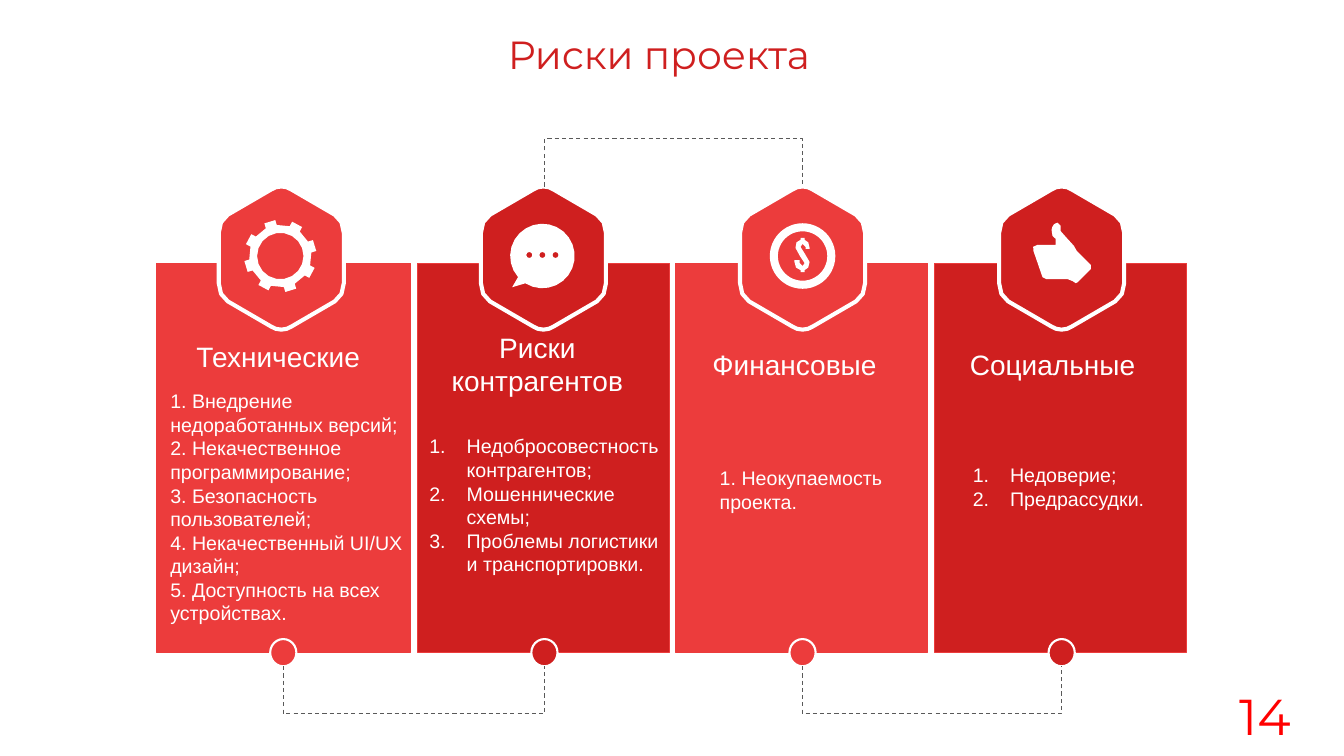
import math
from dataclasses import dataclass

import pptx
import pptx.dml.color
import pptx.enum.dml
import pptx.enum.shapes
import pptx.enum.text
import pptx.oxml
import pptx.oxml.ns
import pptx.util
from pptx.util import Inches

Point = tuple[float, float]
Contour = list[Point]

LIGHT, DARK, WHITE, GREY = "EC3C3C", "CF1F1F", "FFFFFF", "595959"
CARD_TOP, CARD_HEIGHT = 2.61, 3.86
HEX_MIDDLE = 2.56
DOT_WIDTH, DOT_HEIGHT = 0.26, 0.27
ICON_MIDDLE = 2.54
COIN_SIZE, COIN_RIM = 0.65, 0.08
LIST_INDENT = 0.37
SHAPES = pptx.enum.shapes.MSO_SHAPE
ALIGN = pptx.enum.text.PP_ALIGN


@dataclass(frozen=True)
class Card:
    left: float
    width: float
    color: str
    hex_center: float
    dot_left: float
    heading: str
    heading_left: float
    heading_top: float
    risks: list[str]
    risks_left: float
    risks_top: float
    numbered: bool


@dataclass(frozen=True)
class Bracket:
    start: float
    end: float
    y: float
    upward: bool


CARDS = [
    Card(1.55, 2.52, LIGHT, 2.79, 2.68, "Технические", 1.5, 3.16, [
        "1. Внедрение недоработанных версий;", "2. Некачественное программирование;",
        "3. Безопасность пользователей;", "4. Некачественный UI/UX дизайн;",
        "5. Доступность на всех устройствах."], 1.59, 4.56, False),
    Card(4.14, 2.5, DARK, 5.39, 5.27, "Риски контрагентов", 4.08, 3.23, [
        "Недобросовестность контрагентов;", "Мошеннические схемы;",
        "Проблемы логистики и транспортировки."], 4.16, 4.54, True),
    Card(6.7, 2.5, LIGHT, 7.96, 7.83, "Финансовые", 6.63, 3.23,
         ["1. Неокупаемость проекта."], 7.04, 4.39, False),
    Card(9.27, 2.5, DARK, 10.53, 10.4, "Социальные", 9.19, 3.23,
         ["Недоверие;", "Предрассудки."], 9.55, 4.36, True),
]
BRACKETS = [Bracket(2.81, 5.4, 6.61, False), Bracket(5.4, 7.96, 1.85, True),
            Bracket(7.96, 10.53, 6.61, False)]

# Two numbers are a straight step, six are a Bezier step.
HEX_QUARTER = [(0, -0.71), (-0.04, -0.71, -0.07, -0.7, -0.1, -0.68), (-0.53, -0.43),
               (-0.59, -0.39, -0.62, -0.33, -0.62, -0.25)]
THUMB = [(10.49, 2.21), (10.48, 2.21, 10.46, 2.22, 10.45, 2.23),
         (10.44, 2.24, 10.43, 2.27, 10.43, 2.28), (10.42, 2.33, 10.45, 2.36, 10.47, 2.37),
         (10.47, 2.43), (10.29, 2.43), (10.25, 2.43, 10.23, 2.46, 10.25, 2.49),
         (10.34, 2.75), (10.38, 2.77), (10.59, 2.77), (10.64, 2.79), (10.67, 2.81),
         (10.69, 2.8), (10.82, 2.67), (10.82, 2.63), (10.68, 2.49),
         (10.68, 2.49, 10.64, 2.4, 10.57, 2.35), (10.5, 2.31, 10.52, 2.27, 10.52, 2.24)]
DOLLAR = [(7.94, 2.36), (7.94, 2.38), (7.9, 2.39, 7.89, 2.41, 7.89, 2.46),
          (7.89, 2.54, 7.98, 2.55, 7.98, 2.61), (7.96, 2.64), (7.93, 2.61), (7.93, 2.58),
          (7.88, 2.58), (7.88, 2.6), (7.88, 2.65, 7.9, 2.67, 7.94, 2.68), (7.94, 2.7),
          (7.98, 2.7), (7.98, 2.68), (8.01, 2.67, 8.03, 2.65, 8.03, 2.6),
          (8.03, 2.52, 7.94, 2.52, 7.94, 2.45), (7.96, 2.42), (7.99, 2.45), (7.99, 2.47),
          (8.03, 2.47), (8.03, 2.46), (8.03, 2.41, 8.01, 2.39, 7.98, 2.38), (7.98, 2.36)]


def rgb(color: str) -> pptx.dml.color.RGBColor:
    return pptx.dml.color.RGBColor.from_string(color)


def trace(steps: list[tuple[float, ...]], samples: int = 2) -> Contour:
    """Turn straight and Bezier steps into points."""
    points = [steps[0]]
    for step in steps[1:]:
        if len(step) == 2:
            points.append(step)
            continue
        controls = [points[-1], step[:2], step[2:4], step[4:]]
        for t in (i / samples for i in range(1, samples + 1)):
            weights = [math.comb(3, k) * t**k * (1 - t)**(3 - k) for k in range(4)]
            points.append(tuple(sum(w * c[axis] for w, c in zip(weights, controls))
                                for axis in (0, 1)))
    return points


def polar(center: Point, radius: float, degrees: float) -> Point:
    angle = math.radians(degrees)
    return center[0] + radius * math.cos(angle), center[1] + radius * math.sin(angle)


def arc(center: Point, radius: float, count: int, first: float = 0,
        last: float = 360) -> Contour:
    return [polar(center, radius, first + (last - first) * i / count)
            for i in range(count + 1)]


def hexagon(center_x: float) -> Contour:
    quarter = trace(HEX_QUARTER)
    left = quarter + [(x, -y) for x, y in reversed(quarter)]
    ring = left + [(-x, y) for x, y in reversed(left[1:-1])]
    return [(center_x + x, HEX_MIDDLE + y) for x, y in ring]


def gear(center: Point) -> list[Contour]:
    teeth = [polar(center, radius, middle + turn) for middle in range(-107, 253, 45)
             for radius, turn in ((0.31, -10.5), (0.36, -9), (0.36, 9), (0.31, 10.5))]
    return [teeth, arc(center, 0.23, 18)]


def speech_bubble(center: Point) -> list[Contour]:
    outline = arc(center, 0.32, 24, 139, 482) + [(5.08, 2.85)]
    return [outline] + [arc((center[0] + shift, 2.53), 0.03, 8) for shift in (-0.13, 0, 0.13)]


def paint(shape, fill: str, line: str | None = None, width: float = 0) -> None:
    shape.shadow.inherit = False
    shape.fill.solid()
    shape.fill.fore_color.rgb = rgb(fill)
    if line is None:
        shape.line.fill.background()
    else:
        shape.line.color.rgb = rgb(line)
        shape.line.width = pptx.util.Pt(width)


def add_outline(slide, contours: list[Contour], fill: str, line: str | None = None,
                width: float = 0) -> None:
    scaled = [[(Inches(x), Inches(y)) for x, y in contour] for contour in contours]
    builder = slide.shapes.build_freeform(*scaled[0][0])
    builder.add_line_segments(scaled[0][1:], close=True)
    for contour in scaled[1:]:
        builder.move_to(*contour[0])
        builder.add_line_segments(contour[1:], close=True)
    paint(builder.convert_to_shape(), fill, line, width)


def add_coin(slide, center: Point) -> None:
    rim = slide.shapes.add_shape(SHAPES.DONUT, *map(Inches, (
        center[0] - COIN_SIZE / 2, center[1] - COIN_SIZE / 2, COIN_SIZE, COIN_SIZE)))
    rim.adjustments[0] = COIN_RIM / COIN_SIZE
    paint(rim, WHITE)
    add_outline(slide, [trace(DOLLAR)], WHITE)


def add_text(slide, box: tuple[float, float, float, float], lines: list[str], size: float,
             color: str = WHITE, font: str = "Arial", align=ALIGN.LEFT, wrap: bool = True,
             inset: float = 0.1, middle: bool = True, numbered: bool = False) -> None:
    frame = slide.shapes.add_textbox(*map(Inches, box)).text_frame
    frame.word_wrap = wrap
    frame.margin_top = frame.margin_bottom = Inches(inset)
    if middle:
        frame.vertical_anchor = pptx.enum.text.MSO_ANCHOR.MIDDLE
    frame.text = "\n".join(lines)
    for paragraph in frame.paragraphs:
        paragraph.alignment = align
        paragraph.font.size = pptx.util.Pt(size)
        paragraph.font.name = font
        paragraph.font.color.rgb = rgb(color)
        if numbered:
            properties = paragraph._p.get_or_add_pPr()
            properties.set("marL", str(Inches(LIST_INDENT)))
            properties.set("indent", str(-Inches(LIST_INDENT)))
            number = pptx.oxml.parse_xml(
                f'<a:buAutoNum {pptx.oxml.ns.nsdecls("a")} type="arabicPeriod"/>')
            properties.insert_element_before(number, "a:tabLst", "a:defRPr", "a:extLst")


def add_card(slide, card: Card) -> None:
    panel = slide.shapes.add_shape(SHAPES.RECTANGLE, *map(
        Inches, (card.left, CARD_TOP, card.width, CARD_HEIGHT)))
    paint(panel, card.color, LIGHT, 0.75)
    add_outline(slide, [hexagon(card.hex_center)], card.color, WHITE, 2.93)
    add_text(slide, (card.risks_left, card.risks_top, card.width, 0.94), card.risks, 14,
             numbered=card.numbered)
    add_text(slide, (card.heading_left, card.heading_top, card.width, 0.76), [card.heading],
             20, align=ALIGN.CENTER)
    dot = slide.shapes.add_shape(SHAPES.OVAL, *map(
        Inches, (card.dot_left, 6.34, DOT_WIDTH, DOT_HEIGHT)))
    paint(dot, card.color, WHITE, 1.5)


def add_bracket(slide, bracket: Bracket) -> None:
    """Draw an elbow turned a quarter, its bend 400 thin widths (0.42 inches) away."""
    span, thin = bracket.end - bracket.start, pptx.util.Emu(960)
    left = Inches((bracket.start + bracket.end) / 2)
    sides = (left, left + thin) if bracket.upward else (left + thin, left)
    elbow = slide.shapes.add_connector(
        pptx.enum.shapes.MSO_CONNECTOR.ELBOW, sides[0], Inches(bracket.y - span / 2),
        sides[1], Inches(bracket.y + span / 2))
    elbow.line.color.rgb = rgb(GREY)
    elbow.line.width = pptx.util.Pt(0.75)
    elbow.line.dash_style = pptx.enum.dml.MSO_LINE.DASH
    properties = elbow._element.spPr
    properties.get_or_add_xfrm().set("rot", "16200000")
    properties.find(".//" + pptx.oxml.ns.qn("a:avLst")).append(pptx.oxml.parse_xml(
        f'<a:gd {pptx.oxml.ns.nsdecls("a")} name="adj1" fmla="val 40000000"/>'))
    properties.append(pptx.oxml.parse_xml(f'<a:effectLst {pptx.oxml.ns.nsdecls("a")}/>'))


def main() -> None:
    deck = pptx.Presentation()
    deck.slide_width, deck.slide_height = Inches(13.33), Inches(7.5)
    slide = deck.slides.add_slide(deck.slide_layouts[6])
    add_text(slide, (4.94, 0.25, 3.44, 0.57), ["Риски проекта"], 28, DARK, "Montserrat",
             wrap=False, inset=0.05, middle=False)
    for card in CARDS:
        add_card(slide, card)
    for bracket in BRACKETS:
        add_bracket(slide, bracket)
    for icon in (gear((2.78, ICON_MIDDLE)), [trace(THUMB)],
                 speech_bubble((5.38, ICON_MIDDLE))):
        add_outline(slide, icon, WHITE)
    add_coin(slide, (7.96, ICON_MIDDLE))
    add_text(slide, (9.9, 6.9, 3, 0.4), ["14"], 36, "FF0000", "Montserrat", ALIGN.RIGHT,
             inset=0.05)
    deck.save("out.pptx")


if __name__ == "__main__":
    main()
